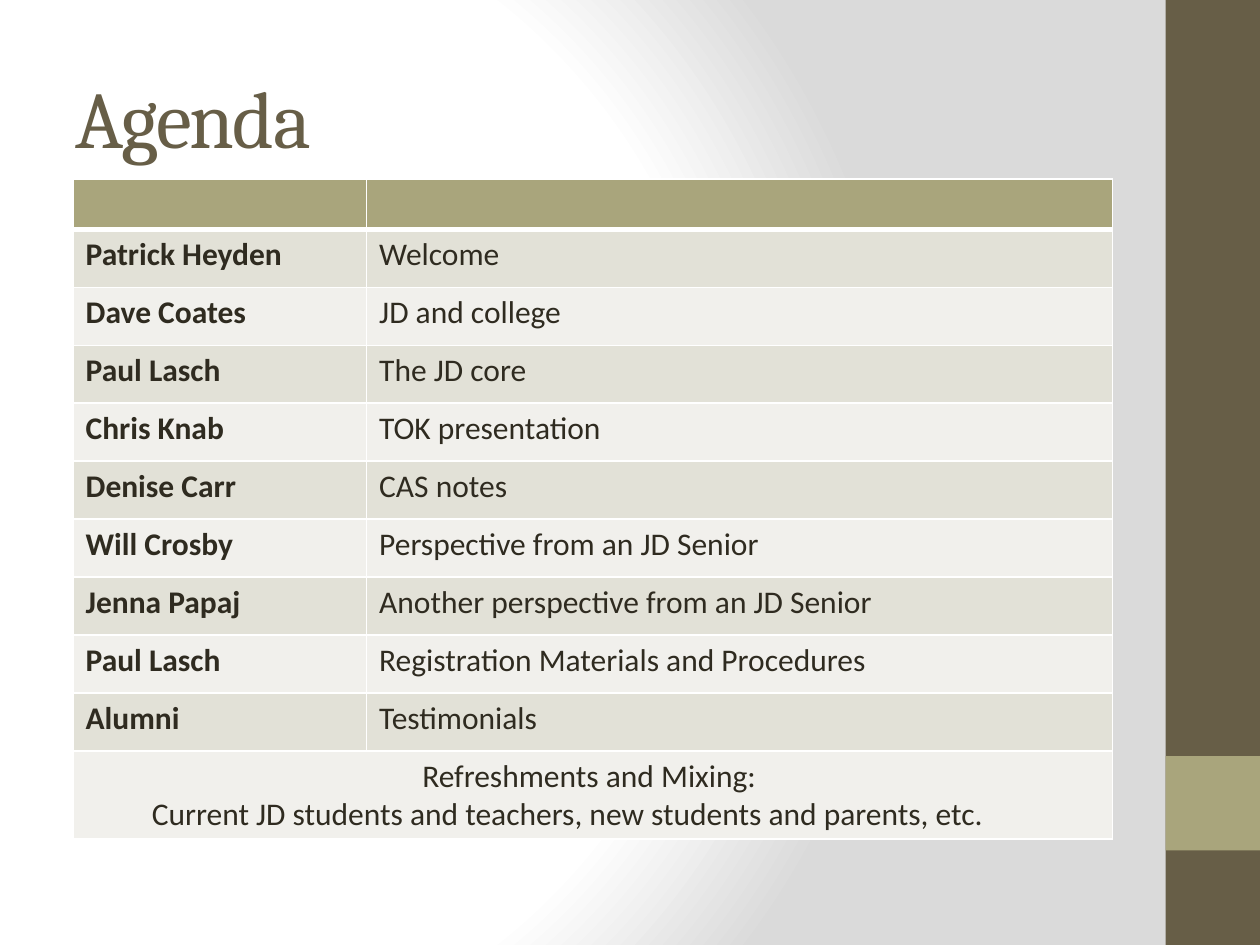
from typing import NamedTuple

from lxml.etree import SubElement
from pptx import Presentation
from pptx.dml.color import RGBColor
from pptx.enum.shapes import MSO_SHAPE as Shape
from pptx.enum.text import MSO_ANCHOR as Anchor, PP_ALIGN as Align
from pptx.oxml import parse_xml
from pptx.oxml.ns import nsdecls, qn
from pptx.util import Inches, Pt

BROWN = RGBColor(0x67, 0x5E, 0x47)
OLIVE = RGBColor(0xA9, 0xA5, 0x7C)
INK = RGBColor(0x2F, 0x2B, 0x20)
WHITE = RGBColor(0xFF, 0xFF, 0xFF)
GREY = RGBColor(0xDA, 0xDA, 0xDA)
DARK_BAND = RGBColor(0xE2, 0xE1, 0xD7)
LIGHT_BAND = RGBColor(0xF1, 0xF0, 0xEC)


class Item(NamedTuple):
    speaker: str
    topic: str


class Band(NamedTuple):
    top: float
    height: float
    color: RGBColor


AGENDA = [
    Item("Patrick Heyden", "Welcome"),
    Item("Dave Coates", "JD and college"),
    Item("Paul Lasch", "The JD core"),
    Item("Chris Knab", "TOK presentation"),
    Item("Denise Carr", "CAS notes"),
    Item("Will Crosby", "Perspective from an JD Senior"),
    Item("Jenna Papaj", "Another perspective from an JD Senior"),
    Item("Paul Lasch", "Registration Materials and Procedures"),
    Item("Alumni", "Testimonials"),
]
CLOSING = ("Refreshments and Mixing: \n"
           "Current JD students and teachers, new students and parents, etc.\t")
SIDEBAR = [Band(0, 7.5, BROWN), Band(6, 0.75, OLIVE)]
COLUMN_WIDTHS = [2.33, 5.92]
ROW_HEIGHTS = [0.32] + [0.46] * len(AGENDA) + [0.56]


def paint_background(slide) -> None:
    slide.background.fill.gradient()
    gradient = slide.element.find(".//" + qn("a:gradFill"))
    stops = "".join(
        f'<a:gs pos="{percent * 1000}"><a:srgbClr val="{color}"/></a:gs>'
        for percent, color in [(0, WHITE), (75, WHITE), (100, GREY)])
    gradient.getparent().replace(gradient, parse_xml(
        f'<a:gradFill {nsdecls("a")} rotWithShape="1"><a:gsLst>{stops}</a:gsLst>'
        '<a:path path="circle"><a:fillToRect l="20000" t="50000" r="100000" '
        'b="50000"/></a:path></a:gradFill>'))


def add_band(slide, band: Band) -> None:
    bar = slide.shapes.add_shape(Shape.RECTANGLE, Inches(9.25), Inches(band.top),
                                 Inches(0.75), Inches(band.height))
    bar.shadow.inherit = False
    bar.fill.solid()
    bar.fill.fore_color.rgb = band.color
    bar.line.fill.background()


def add_title(slide, text: str) -> None:
    frame = slide.shapes.add_textbox(Inches(0.5), Inches(0.3),
                                     Inches(8.33), Inches(1.25)).text_frame
    frame.word_wrap = True
    frame.vertical_anchor = Anchor.MIDDLE
    frame.text = text
    font = frame.paragraphs[0].runs[0].font
    font.name, font.size, font.color.rgb = "Cambria", Pt(46), BROWN
    font._element.set("spc", "-100")


def style_cell(cell, fill: RGBColor, top: float = 1, bottom: float = 1) -> None:
    cell.fill.solid()
    cell.fill.fore_color.rgb = fill
    properties = cell._tc.get_or_add_tcPr()
    # Borders come before the fill in the cell properties
    for index, (side, width) in enumerate(
            [("L", 1), ("R", 1), ("T", top), ("B", bottom)]):
        border = SubElement(properties, qn(f"a:ln{side}"), w=str(Pt(width)))
        SubElement(SubElement(border, qn("a:solidFill")),
                   qn("a:srgbClr"), val=str(WHITE))
        properties.insert(index, border)


def write_cell(cell, text: str, bold: bool = False, align=Align.LEFT) -> None:
    cell.text_frame.text = text
    for paragraph in cell.text_frame.paragraphs:
        paragraph.alignment = align
        for run in paragraph.runs:
            font = run.font
            font.name, font.size, font.bold = "Calibri", Pt(18), bold
            font.color.rgb = INK


def add_agenda(slide) -> None:
    table = slide.shapes.add_table(
        len(ROW_HEIGHTS), len(COLUMN_WIDTHS), Inches(0.58), Inches(1.42),
        Inches(sum(COLUMN_WIDTHS)), Inches(sum(ROW_HEIGHTS))).table
    table.first_row = table.horz_banding = False
    for column, width in zip(table.columns, COLUMN_WIDTHS):
        column.width = Inches(width)
    for row, height in zip(table.rows, ROW_HEIGHTS):
        row.height = Inches(height)

    # Fills and borders, with a thick rule under the header
    for number, row in enumerate(table.rows):
        for cell in row.cells:
            if number == 0:
                style_cell(cell, OLIVE, bottom=3)
            else:
                style_cell(cell, DARK_BAND if number % 2 else LIGHT_BAND,
                           top=3 if number == 1 else 1)

    # Speakers and topics
    for number, item in enumerate(AGENDA, start=1):
        write_cell(table.cell(number, 0), item.speaker, bold=True)
        write_cell(table.cell(number, 1), item.topic)

    # Closing row across both columns
    last = len(ROW_HEIGHTS) - 1
    closing = table.cell(last, 0)
    closing.merge(table.cell(last, 1))
    write_cell(closing, CLOSING, align=Align.CENTER)


def main() -> None:
    deck = Presentation()
    deck.slide_width, deck.slide_height = Inches(10), Inches(7.5)
    slide = deck.slides.add_slide(deck.slide_layouts[6])
    paint_background(slide)
    for band in SIDEBAR:
        add_band(slide, band)
    add_title(slide, "Agenda")
    add_agenda(slide)
    deck.save("out.pptx")


if __name__ == "__main__":
    main()
